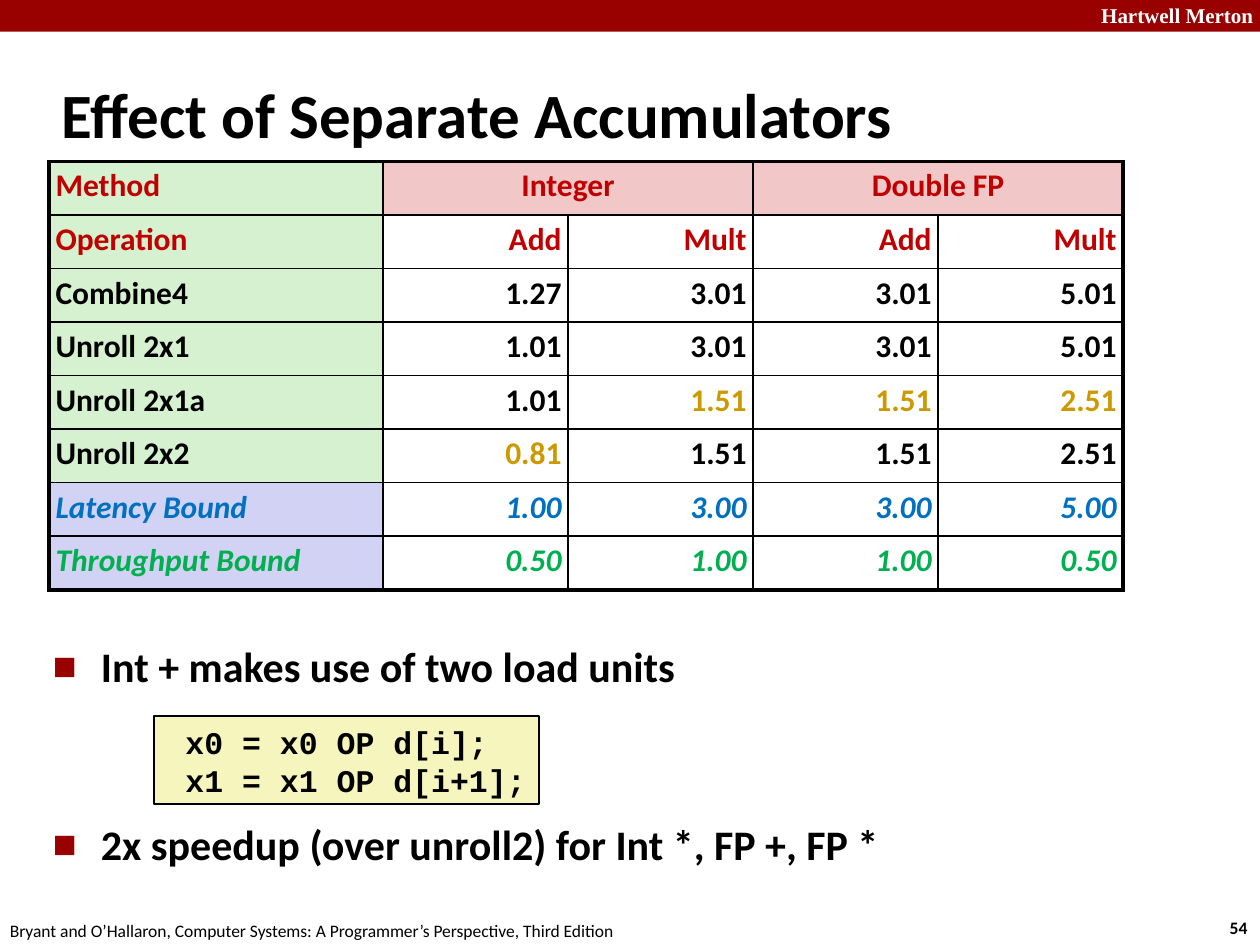
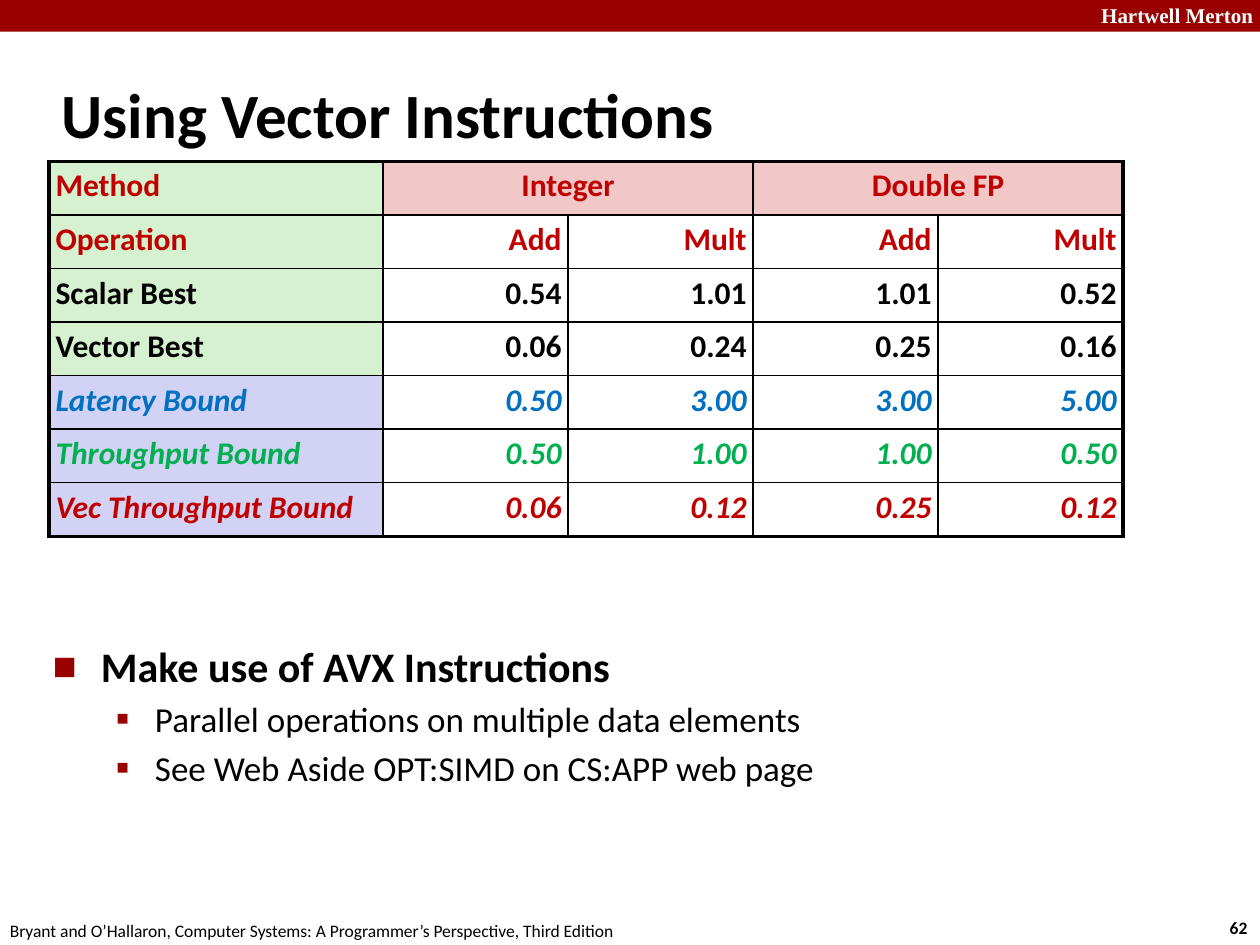
"""Build two slides comparing the performance of loop optimisations."""
from lxml.etree import SubElement
from pptx import Presentation
from pptx.dml.color import RGBColor
from pptx.enum.shapes import MSO_SHAPE
from pptx.enum.text import MSO_ANCHOR, MSO_AUTO_SIZE, PP_ALIGN
from pptx.oxml.ns import qn
from pptx.util import Cm, Pt

BLACK, WHITE = "000000", "FFFFFF"
BAND_RED, HEADING_RED = "990000", "C00000"
LABEL_GREEN, GROUP_PINK, BOUND_LILAC = "D5F1CF", "F1C7C7", "D2D2F4"
CODE_YELLOW, GOLD = "F6F5BD", "CC9900"
LATENCY_BLUE, THROUGHPUT_GREEN = "0070C0", "00B050"
BODY_FONT = "Calibri"

COLUMN_WIDTHS = [6.73] + [3.73] * 4
ROW_HEIGHT = 1.08
HEADINGS = [["Method", "Integer", "", "Double FP", ""],
            ["Operation", "Add", "Mult", "Add", "Mult"]]
BULLETS = [
    dict(size=24, bold=True, margin=0.97, hanging=0.97, symbol="■", scale=60),
    dict(size=20, bold=False, margin=2.06, hanging=0.79, symbol="▪", scale=110),
]


def color(value):
    """Turn a hex string into a colour."""
    return RGBColor.from_string(value)


def place(shape, left, top, width, height):
    """Move and size a shape, in centimetres."""
    shape.left, shape.top = Cm(left), Cm(top)
    shape.width, shape.height = Cm(width), Cm(height)


def add_run(paragraph, text, size, hex_color=BLACK, bold=False, italic=False,
            font=BODY_FONT):
    """Append one formatted run."""
    run = paragraph.add_run()
    run.text = text
    run.font.name, run.font.size = font, Pt(size)
    run.font.bold, run.font.italic = bold, italic
    run.font.color.rgb = color(hex_color)


def add_label(slide, box, text, size, **style):
    """Add a one-line text box."""
    frame = slide.shapes.add_textbox(*map(Cm, box)).text_frame
    frame.word_wrap = True
    add_run(frame.paragraphs[0], text, size, **style)


def add_rectangle(slide, box, fill, line=None):
    """Add a flat rectangle with an optional outline."""
    shape = slide.shapes.add_shape(MSO_SHAPE.RECTANGLE, *map(Cm, box))
    shape.shadow.inherit = False
    shape.fill.solid()
    shape.fill.fore_color.rgb = color(fill)
    if line:
        shape.line.color.rgb = color(line)
        shape.line.width = Pt(1)
    else:
        shape.line.fill.background()
    return shape


def add_content_slide(presentation, title, number):
    """Add a slide with its band, footer, page number and title."""
    slide = presentation.slides.add_slide(presentation.slide_layouts[1])
    add_rectangle(slide, (0, 0, 25.4, 0.64), BAND_RED)
    add_label(slide, (21.95, -0.08, 3.63, 0.76), "Hartwell Merton", 12,
              hex_color=WHITE, bold=True, font="Times New Roman")
    add_label(slide, (24.54, 18.36, 0.94, 0.69), number, 10, bold=True)
    add_label(slide, (-0.05, 18.42, 12.9, 0.69),
              "Bryant and O’Hallaron, Computer Systems: "
              "A Programmer’s Perspective, Third Edition", 10)
    place(slide.shapes.title, 0.99, 1.22, 21.08, 2.11)
    frame = slide.shapes.title.text_frame
    frame.auto_size = MSO_AUTO_SIZE.NONE
    frame.vertical_anchor = MSO_ANCHOR.MIDDLE
    frame.paragraphs[0].alignment = PP_ALIGN.LEFT
    add_run(frame.paragraphs[0], title, 36, bold=True)
    return slide


def set_bullet(paragraph, margin, hanging, symbol, scale):
    """Give a paragraph a red square bullet and a hanging indent."""
    properties = paragraph._p.get_or_add_pPr()
    properties.set("marL", str(Cm(margin)))
    properties.set("indent", str(-Cm(hanging)))
    bullet_color = SubElement(properties, qn("a:buClr"))
    SubElement(bullet_color, qn("a:srgbClr"), val=BAND_RED)
    SubElement(properties, qn("a:buSzPct"), val=str(scale * 1000))
    SubElement(properties, qn("a:buFont"), typeface=BODY_FONT)
    SubElement(properties, qn("a:buChar"), char=symbol)


def fill_body(slide, items):
    """Write (level, text, space before) items into the body placeholder."""
    body = slide.placeholders[1]
    place(body, 0.81, 12.78, 23.09, 5.21)
    frame = body.text_frame
    frame.auto_size = MSO_AUTO_SIZE.NONE
    for index, (level, text, space) in enumerate(items):
        paragraph = frame.add_paragraph() if index else frame.paragraphs[0]
        look = BULLETS[level]
        paragraph.level = level
        set_bullet(paragraph, look["margin"], look["hanging"],
                   look["symbol"], look["scale"])
        paragraph.space_before = Pt(space)
        add_run(paragraph, text, look["size"], bold=look["bold"])


def set_borders(cell, widths):
    """Draw black borders, given left, right, top and bottom widths."""
    properties = cell._tc.get_or_add_tcPr()
    for index, (side, width) in enumerate(zip("LRTB", widths)):
        line = SubElement(properties, qn(f"a:ln{side}"), w=str(Pt(width)))
        fill = SubElement(line, qn("a:solidFill"))
        SubElement(fill, qn("a:srgbClr"), val=BLACK)
        properties.insert(index, line)


def write_cell(cell, text, alignment, fill, **style):
    """Fill one table cell and write its text."""
    cell.margin_left = cell.margin_right = Cm(0.13)
    cell.margin_top = cell.margin_bottom = Cm(0.13)
    if fill:
        cell.fill.solid()
        cell.fill.fore_color.rgb = color(fill)
    else:
        cell.fill.background()
    paragraph = cell.text_frame.paragraphs[0]
    paragraph.alignment = alignment
    paragraph.line_spacing = 0.95
    if text:
        add_run(paragraph, text, 18, bold=True, **style)


def add_results_table(slide, methods, bounds, highlights=()):
    """Add the table of cycles per element, with best values in gold."""
    rows = [(cells, HEADING_RED, LABEL_GREEN, False) for cells in HEADINGS]
    rows += [(cells, BLACK, LABEL_GREEN, False) for cells in methods]
    rows += [(cells, ink, BOUND_LILAC, True) for cells, ink in bounds]
    last_row, last_column = len(rows) - 1, len(COLUMN_WIDTHS) - 1
    table_frame = slide.shapes.add_table(
        len(rows), len(COLUMN_WIDTHS), Cm(0.99), Cm(3.25),
        Cm(sum(COLUMN_WIDTHS)), Cm(ROW_HEIGHT * len(rows)))
    table = table_frame.table
    table.first_row = table.horz_banding = False
    for column, width in zip(table.columns, COLUMN_WIDTHS):
        column.width = Cm(width)
    for first in (1, 3):
        table.cell(0, first).merge(table.cell(0, first + 1))
    for row, (cells, ink, label_fill, italic) in enumerate(rows):
        table.rows[row].height = Cm(ROW_HEIGHT)
        for column, text in enumerate(cells):
            cell = table.cell(row, column)
            if column == 0:
                alignment, fill = PP_ALIGN.LEFT, label_fill
            elif row == 0:
                alignment, fill = PP_ALIGN.CENTER, GROUP_PINK
            else:
                alignment, fill = PP_ALIGN.RIGHT, None
            cell_ink = GOLD if (cells[0], column) in highlights else ink
            write_cell(cell, text, alignment, fill,
                       hex_color=cell_ink, italic=italic)
            end = column + cell.span_width - 1 if cell.is_merge_origin else column
            edges = (column == 0, end == last_column, row == 0, row == last_row)
            set_borders(cell, [2.25 if outer else 1 for outer in edges])


def add_code_box(slide, box, lines):
    """Add a yellow box with lines of code."""
    frame = add_rectangle(slide, box, CODE_YELLOW, BLACK).text_frame
    frame.word_wrap = True
    frame.vertical_anchor = MSO_ANCHOR.TOP
    frame.margin_left, frame.margin_right = Cm(0.64), Cm(0)
    for index, text in enumerate(lines):
        paragraph = frame.add_paragraph() if index else frame.paragraphs[0]
        paragraph.alignment = PP_ALIGN.LEFT
        paragraph.line_spacing = Pt(21.9)
        add_run(paragraph, text, 18, bold=True, font="Courier New")


def build_accumulators_slide(presentation):
    """Build the slide on separate accumulators."""
    slide = add_content_slide(
        presentation, "Effect of Separate Accumulators", "54")
    fill_body(slide, [
        (0, "Int + makes use of two load units", 4.8),
        (0, "2x speedup (over unroll2) for Int *, FP +, FP *", 73)])
    add_code_box(slide, (3.1, 14.43, 7.77, 1.78),
                 ["x0 = x0 OP d[i];", "x1 = x1 OP d[i+1];"])
    add_results_table(
        slide,
        [["Combine4", "1.27", "3.01", "3.01", "5.01"],
         ["Unroll 2x1", "1.01", "3.01", "3.01", "5.01"],
         ["Unroll 2x1a", "1.01", "1.51", "1.51", "2.51"],
         ["Unroll 2x2", "0.81", "1.51", "1.51", "2.51"]],
        [(["Latency Bound", "1.00", "3.00", "3.00", "5.00"], LATENCY_BLUE),
         (["Throughput Bound", "0.50", "1.00", "1.00", "0.50"],
          THROUGHPUT_GREEN)],
        {("Unroll 2x1a", 2), ("Unroll 2x1a", 3), ("Unroll 2x1a", 4),
         ("Unroll 2x2", 1)})


def build_vector_slide(presentation):
    """Build the slide on vector instructions."""
    slide = add_content_slide(presentation, "Using Vector Instructions", "62")
    fill_body(slide, [
        (0, "Make use of AVX Instructions", 4.8),
        (1, "Parallel operations on multiple data elements", 4),
        (1, "See Web Aside OPT:SIMD on CS:APP web page", 4)])
    add_results_table(
        slide,
        [["Scalar Best", "0.54", "1.01", "1.01", "0.52"],
         ["Vector Best", "0.06", "0.24", "0.25", "0.16"]],
        [(["Latency Bound", "0.50", "3.00", "3.00", "5.00"], LATENCY_BLUE),
         (["Throughput Bound", "0.50", "1.00", "1.00", "0.50"],
          THROUGHPUT_GREEN),
         (["Vec Throughput Bound", "0.06", "0.12", "0.25", "0.12"],
          HEADING_RED)])


def main():
    """Build and save the presentation."""
    presentation = Presentation()
    presentation.slide_width, presentation.slide_height = Cm(25.4), Cm(19.05)
    build_accumulators_slide(presentation)
    build_vector_slide(presentation)
    presentation.save("out.pptx")


if __name__ == "__main__":
    main()
